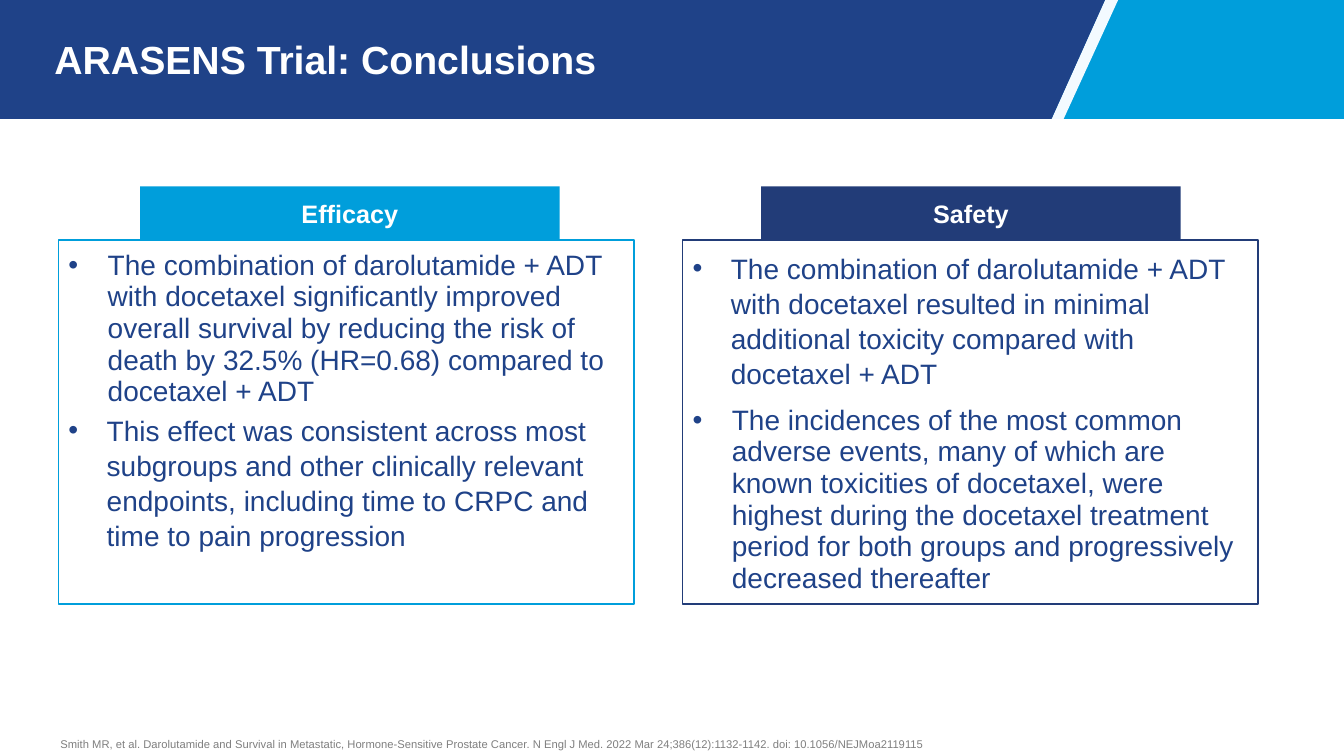
from lxml import etree
from pptx import Presentation
from pptx.dml.color import RGBColor
from pptx.enum import shapes, text
from pptx.oxml import ns
from pptx.util import Inches, Pt

BLUE = RGBColor(0x1F, 0x42, 0x88)
CYAN = RGBColor(0x00, 0x9E, 0xDB)
NAVY = RGBColor(0x22, 0x3C, 0x78)
PALE = RGBColor(0xF3, 0xFA, 0xFF)
WHITE = RGBColor(0xFF, 0xFF, 0xFF)
GRAY = RGBColor(0x7F, 0x7F, 0x7F)

BANNER_HEIGHT = 1.18
PANEL_WIDTH, PANEL_TOP, PANEL_HEIGHT = 5.71, 2.38, 3.61
HEADING_WIDTH, HEADING_HEIGHT = 4.16, 0.53

# Paragraph styles: line spacing, space before, space after, hanging indent
TIGHT = (0.94, 5, 0, 0.39)
LOOSE = (1.04, 3, 6, 0.38)

# Panel left, heading left, colour, heading, bullets
PANELS = [
    (0.58, 1.39, CYAN, "Efficacy", [
        ("The combination of darolutamide + ADT with docetaxel significantly "
         "improved overall survival by reducing the risk of death by 32.5% "
         "(HR=0.68) compared to docetaxel + ADT", TIGHT),
        ("This effect was consistent across most subgroups and other "
         "clinically relevant endpoints, including time to CRPC and time to "
         "pain progression", LOOSE),
    ]),
    (6.77, 7.55, NAVY, "Safety", [
        ("The combination of darolutamide + ADT with docetaxel resulted in "
         "minimal additional toxicity compared with docetaxel + ADT", LOOSE),
        ("The incidences of the most common adverse events, many of which are "
         "known toxicities of docetaxel, were highest during the docetaxel "
         "treatment period for both groups and progressively decreased "
         "thereafter", TIGHT),
    ]),
]


def add_rectangle(slide, left, top, width, height, fill=None, line=None):
    shape = slide.shapes.add_shape(
        shapes.MSO_SHAPE.RECTANGLE,
        Inches(left), Inches(top), Inches(width), Inches(height))
    shape.shadow.inherit = False
    if fill is None:
        shape.fill.background()
    else:
        shape.fill.solid()
        shape.fill.fore_color.rgb = fill
    if line is None:
        shape.line.fill.background()
    else:
        shape.line.color.rgb = line
        shape.line.width = Pt(1.25)
    return shape


def add_polygon(slide, points, fill):
    start, *rest = [(Inches(x), Inches(y)) for x, y in points]
    builder = slide.shapes.build_freeform(*start)
    builder.add_line_segments(rest, close=True)
    shape = builder.convert_to_shape()
    shape.shadow.inherit = False
    shape.fill.solid()
    shape.fill.fore_color.rgb = fill
    shape.line.fill.background()


def set_frame(shape, anchor, insets=(0.1, 0.05, 0.1, 0.05)):
    frame = shape.text_frame
    frame.word_wrap = True
    frame.vertical_anchor = anchor
    (frame.margin_left, frame.margin_top,
     frame.margin_right, frame.margin_bottom) = map(Inches, insets)
    return frame


def add_run(paragraph, wording, size, color, bold=False):
    run = paragraph.add_run()
    run.text = wording
    run.font.name = "Arial"
    run.font.size = Pt(size)
    run.font.bold = bold
    run.font.color.rgb = color


def add_label(slide, box, anchor, wording, size, color, **frame_options):
    shape = slide.shapes.add_textbox(*map(Inches, box))
    paragraph = set_frame(shape, anchor, **frame_options).paragraphs[0]
    add_run(paragraph, wording, size, color, bold=size > 20)
    return paragraph


def add_bullet(paragraph, wording, style, first):
    line_spacing, before, after, indent = style
    paragraph.alignment = text.PP_ALIGN.LEFT
    paragraph.line_spacing = line_spacing
    paragraph.space_before = Pt(0 if first else before)
    paragraph.space_after = Pt(after)
    properties = paragraph._p.get_or_add_pPr()
    properties.set("marL", str(Inches(indent)))
    properties.set("indent", str(-Inches(indent)))
    etree.SubElement(properties, ns.qn("a:buFont"), typeface="Arial")
    etree.SubElement(properties, ns.qn("a:buChar"), char="•")
    add_run(paragraph, wording, 20, BLUE)


def add_panel(slide, left, heading_left, color, heading, bullets):
    body = add_rectangle(slide, left, PANEL_TOP, PANEL_WIDTH, PANEL_HEIGHT,
                         line=color)
    frame = set_frame(body, text.MSO_ANCHOR.TOP, (0.1, 0.1, 0.1, 0.1))
    for index, (wording, style) in enumerate(bullets):
        paragraph = frame.add_paragraph() if index else frame.paragraphs[0]
        add_bullet(paragraph, wording, style, first=index == 0)

    tab = add_rectangle(slide, heading_left, PANEL_TOP - HEADING_HEIGHT,
                        HEADING_WIDTH, HEADING_HEIGHT, fill=color)
    paragraph = set_frame(tab, text.MSO_ANCHOR.MIDDLE).paragraphs[0]
    paragraph.alignment = text.PP_ALIGN.CENTER
    add_run(paragraph, heading, 18, WHITE, bold=True)


def add_banner(slide):
    add_rectangle(slide, 10.43, 0, 2.91, BANNER_HEIGHT, fill=CYAN)
    add_polygon(slide, [(10.96, 0), (11.09, 0), (10.55, BANNER_HEIGHT),
                        (10.43, BANNER_HEIGHT)], PALE)
    add_polygon(slide, [(0, 0), (10.96, 0), (10.43, BANNER_HEIGHT),
                        (0, BANNER_HEIGHT)], BLUE)
    title = add_label(slide, (0.54, 0.14, 11.43, 0.97),
                      text.MSO_ANCHOR.MIDDLE, "ARASENS Trial: Conclusions",
                      28, WHITE, insets=(0, 0.05, 0.1, 0.05))
    title.line_spacing = 0.85


def main():
    presentation = Presentation()
    presentation.slide_width = Inches(13.33)
    presentation.slide_height = Inches(7.5)
    slide = presentation.slides.add_slide(presentation.slide_layouts[6])

    # Title banner
    add_banner(slide)

    # Efficacy and safety panels
    for panel in PANELS:
        add_panel(slide, *panel)

    # Citation
    add_label(slide, (0.5, 7, 11.09, 0.5), text.MSO_ANCHOR.BOTTOM,
              "Smith MR, et al. Darolutamide and Survival in Metastatic, "
              "Hormone-Sensitive Prostate Cancer. N Engl J Med. 2022 Mar "
              "24;386(12):1132-1142. doi: 10.1056/NEJMoa2119115", 8, GRAY)

    presentation.save("out.pptx")


if __name__ == "__main__":
    main()
